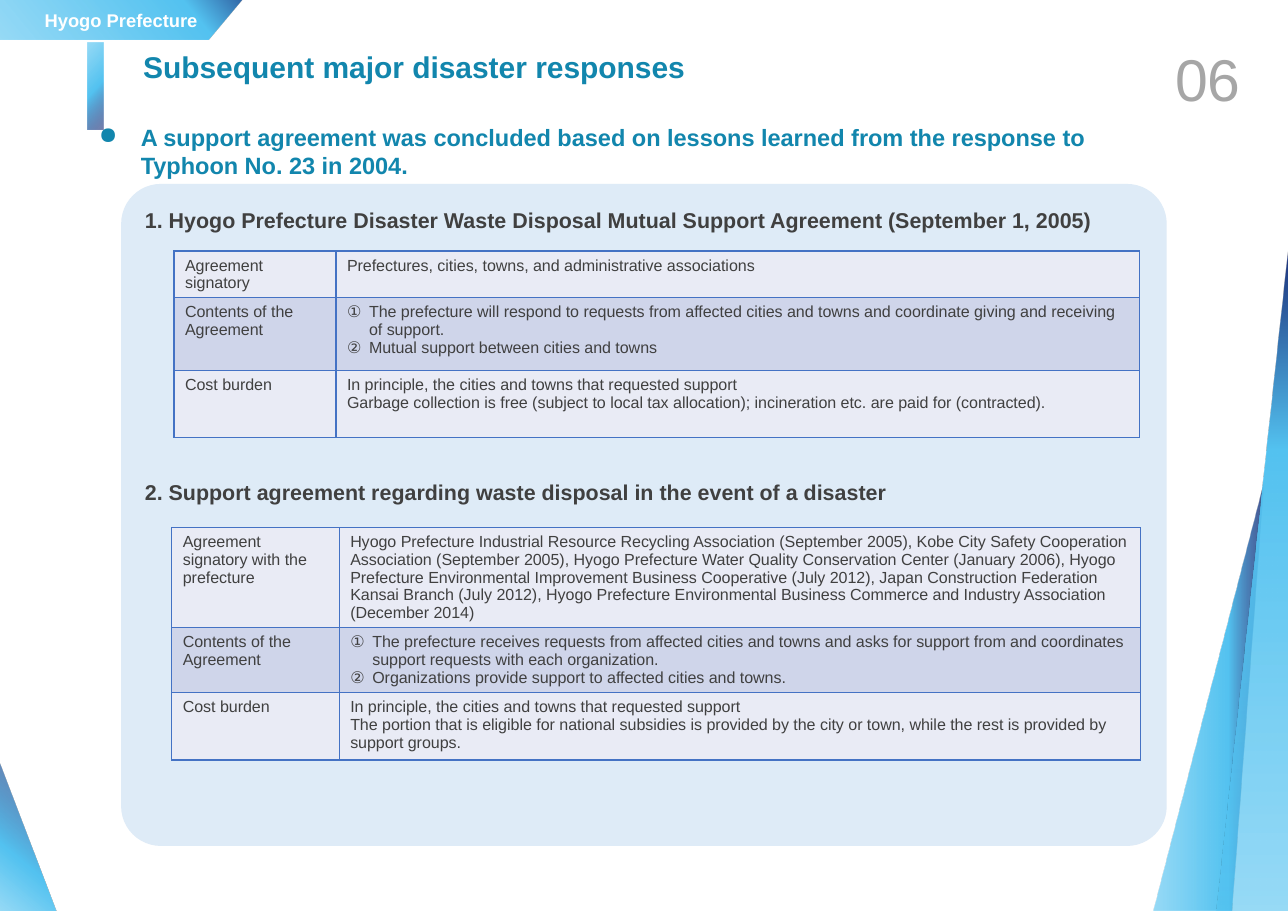
from lxml import etree
from pptx import Presentation
from pptx.dml.color import RGBColor
from pptx.enum.shapes import MSO_SHAPE
from pptx.enum.text import MSO_ANCHOR, PP_ALIGN
from pptx.oxml.ns import qn
from pptx.util import Inches, Pt

WIDE, HIGH = Inches(11.69), Inches(8.27)
FONT = "Arial"
WHITE = RGBColor(0xFF, 0xFF, 0xFF)
GREY = RGBColor(0xA6, 0xA6, 0xA6)
DARK = RGBColor(0x40, 0x40, 0x40)
TEAL = RGBColor(0x12, 0x86, 0xAD)
PALE = RGBColor(0xDE, 0xEB, 0xF7)
LINE = RGBColor(0x44, 0x72, 0xC4)
BANDS = RGBColor(0xE9, 0xEB, 0xF5), RGBColor(0xCF, 0xD5, 0xEA)
SKY = RGBColor(0x54, 0xC3, 0xF1)
BLUE = RGBColor(0x33, 0x6A, 0xA9)
NAVY = RGBColor(0x1C, 0x2B, 0x76)

SIGNS = [
    ["Agreement signatory",
     ["Prefectures, cities, towns, and administrative associations"]],
    ["Contents of the Agreement",
     ["①\tThe prefecture will respond to requests from affected cities and towns "
      "and coordinate giving and receiving of support.",
      "②\tMutual support between cities and towns"]],
    ["Cost burden",
     ["In principle, the cities and towns that requested support",
      "Garbage collection is free (subject to local tax allocation); "
      "incineration etc. are paid for (contracted)."]],
]
GROUPS = [
    ["Agreement signatory with the prefecture",
     ["Hyogo Prefecture Industrial Resource Recycling Association (September 2005), "
      "Kobe City Safety Cooperation Association (September 2005), "
      "Hyogo Prefecture Water Quality Conservation Center (January 2006), "
      "Hyogo Prefecture Environmental Improvement Business Cooperative (July 2012), "
      "Japan Construction Federation Kansai Branch (July 2012), "
      "Hyogo Prefecture Environmental Business Commerce and Industry Association "
      "(December 2014)"]],
    ["Contents of the Agreement",
     ["①\tThe prefecture receives requests from affected cities and towns and asks "
      "for support from and coordinates support requests with each organization.",
      "②\tOrganizations provide support to affected cities and towns."]],
    ["Cost burden",
     ["In principle, the cities and towns that requested support",
      "The portion that is eligible for national subsidies is provided by the city "
      "or town, while the rest is provided by support groups."]],
]


# Lengths are percentages of the slide's width and height
def across(share):
    return round(WIDE * share / 100)


def down(share):
    return round(HIGH * share / 100)


def place(left, top, width, height):
    return across(left), down(top), across(width), down(height)


def style(par, size, color, bold=False):
    font = par.font
    font.name, font.size, font.bold = FONT, Pt(size), bold
    font.color.rgb = color


def hang(par, depth):
    props = par._p.get_or_add_pPr()
    props.set("marL", str(Inches(depth)))
    props.set("indent", str(-Inches(depth)))
    return props


def shade(shape, angle, *stops):
    """Fill with (position, colour, opacity) stops."""
    plain(shape)
    shape.fill.background()
    grad = etree.Element(qn("a:gradFill"), rotWithShape="1")
    group = etree.SubElement(grad, qn("a:gsLst"))
    for pos, color, solid in stops:
        stop = etree.SubElement(group, qn("a:gs"), pos=str(pos * 1000))
        tint = etree.SubElement(stop, qn("a:srgbClr"), val=str(color))
        etree.SubElement(tint, qn("a:alpha"), val=str(solid * 1000))
    etree.SubElement(grad, qn("a:lin"), ang=str(angle * 60000), scaled="0")
    props = shape.element.spPr
    props.replace(props.find(qn("a:noFill")), grad)


def plain(shape):
    shape.shadow.inherit = False
    shape.line.fill.background()


def block(slide, kind, area):
    shape = slide.shapes.add_shape(kind, *place(*area))
    plain(shape)
    return shape


def outline(slide, points):
    spots = [(across(x), down(y)) for x, y in points]
    pen = slide.shapes.build_freeform(*spots[0], scale=1.0)
    pen.add_line_segments(spots[1:], close=True)
    return pen.convert_to_shape()


def label(slide, area, text, size, color, bold=True, inset=0.1,
          anchor=MSO_ANCHOR.MIDDLE, align=PP_ALIGN.LEFT, bullet=None):
    frame = slide.shapes.add_textbox(*place(*area)).text_frame
    frame.word_wrap = True
    frame.vertical_anchor = anchor
    frame.margin_left = frame.margin_right = Inches(inset)
    par = frame.paragraphs[0]
    par.text, par.alignment = text, align
    if bullet:
        etree.SubElement(hang(par, 0.38), qn("a:buChar"), char=bullet)
    style(par, size, color, bold)


def border(cell):
    props = cell._tc.get_or_add_tcPr()
    for side in ("lnL", "lnR", "lnT", "lnB"):
        edge = etree.SubElement(props, qn(f"a:{side}"), w=str(Pt(1)))
        fill = etree.SubElement(edge, qn("a:solidFill"))
        etree.SubElement(fill, qn("a:srgbClr"), val=str(LINE))


def write(cell, lines):
    frame = cell.text_frame
    frame.text = "\n".join(lines)
    for par in frame.paragraphs:
        par.line_spacing = Pt(11.6)
        if "\t" in par.text:
            hang(par, 0.2)
        style(par, 10.5, DARK)


def grid(slide, left, top, cols, rows, data):
    area = place(left, top, sum(cols), sum(rows))
    table = slide.shapes.add_table(len(rows), len(cols), *area).table
    table.first_row = table.horz_banding = False
    for col, width in zip(table.columns, cols):
        col.width = across(width)
    for num, (row, height) in enumerate(zip(table.rows, rows)):
        row.height = down(height)
        name, lines = data[num]
        for cell, words in zip(row.cells, ([name], lines)):
            border(cell)
            cell.fill.solid()
            cell.fill.fore_color.rgb = BANDS[num % 2]
            write(cell, words)


def decor(slide):
    start = (0, SKY, 60)
    # Header tab
    tab = outline(slide, [(0, 0), (18.82, 0), (16.17, 4.35), (0, 4.35)])
    shade(tab, 320, start, (78, SKY, 100), (99, BLUE, 100), (100, NAVY, 62))
    frame = tab.text_frame
    frame.vertical_anchor = MSO_ANCHOR.MIDDLE
    par = frame.paragraphs[0]
    par.text, par.alignment = "Hyogo Prefecture", PP_ALIGN.CENTER
    style(par, 12, WHITE, True)
    # Corner wedges
    wedge = block(slide, MSO_SHAPE.RIGHT_TRIANGLE, (0, 83.8, 4.36, 16.2))
    shade(wedge, 310, start, (35, SKY, 100), (100, NAVY, 60))
    blade = outline(slide, [(95.64, 100), (98.12, 52.84), (89.56, 100)])
    shade(blade, 0, start, (68, SKY, 100), (100, NAVY, 80))
    spike = block(slide, MSO_SHAPE.RIGHT_TRIANGLE, (94.44, 26.6, 5.56, 73.4))
    spike.element.spPr.xfrm.set("flipH", "1")
    shade(spike, 270, start, (69, SKY, 100), (100, NAVY, 100))
    # Title bar
    bar = block(slide, MSO_SHAPE.RECTANGLE, (6.84, 4.72, 1.2, 9.55))
    shade(bar, 40, start, (53, SKY, 100), (100, NAVY, 60))


def main():
    deck = Presentation()
    deck.slide_width, deck.slide_height = WIDE, HIGH
    slide = deck.slides.add_slide(deck.slide_layouts[6])
    decor(slide)

    # Page number, lead and title
    label(slide, (86.48, 5.93, 10.69, 5.32), "06", 38.5, GREY, False,
          align=PP_ALIGN.RIGHT)
    label(slide, (6.84, 14.51, 81.27, 4.11),
          "A support agreement was concluded based on lessons learned from the "
          "response to Typhoon No. 23 in 2004.", 15.4, TEAL, bullet="●")
    label(slide, (10.69, 4.72, 56.72, 12.09), "Subsequent major disaster responses",
          19.6, TEAL, inset=0.05, anchor=MSO_ANCHOR.TOP)

    # Panel with its two agreements
    panel = block(slide, MSO_SHAPE.ROUNDED_RECTANGLE, (9.41, 20.19, 81.18, 72.67))
    panel.adjustments[0] = 0.06
    panel.fill.solid()
    panel.fill.fore_color.rgb = PALE
    heads = [
        (22.1, "1. Hyogo Prefecture Disaster Waste Disposal Mutual Support Agreement "
               "(September 1, 2005)"),
        (52, "2. Support agreement regarding waste disposal in the event of a disaster"),
    ]
    for top, text in heads:
        label(slide, (11.25, top, 78, 4), text, 14, DARK, inset=0)
    grid(slide, 13.52, 27.57, (12.57, 62.36), (5.08, 7.98, 7.38), SIGNS)
    grid(slide, 13.34, 57.92, (13, 62.19), (11, 7.13, 7.38), GROUPS)
    deck.save("out.pptx")


if __name__ == "__main__":
    main()
